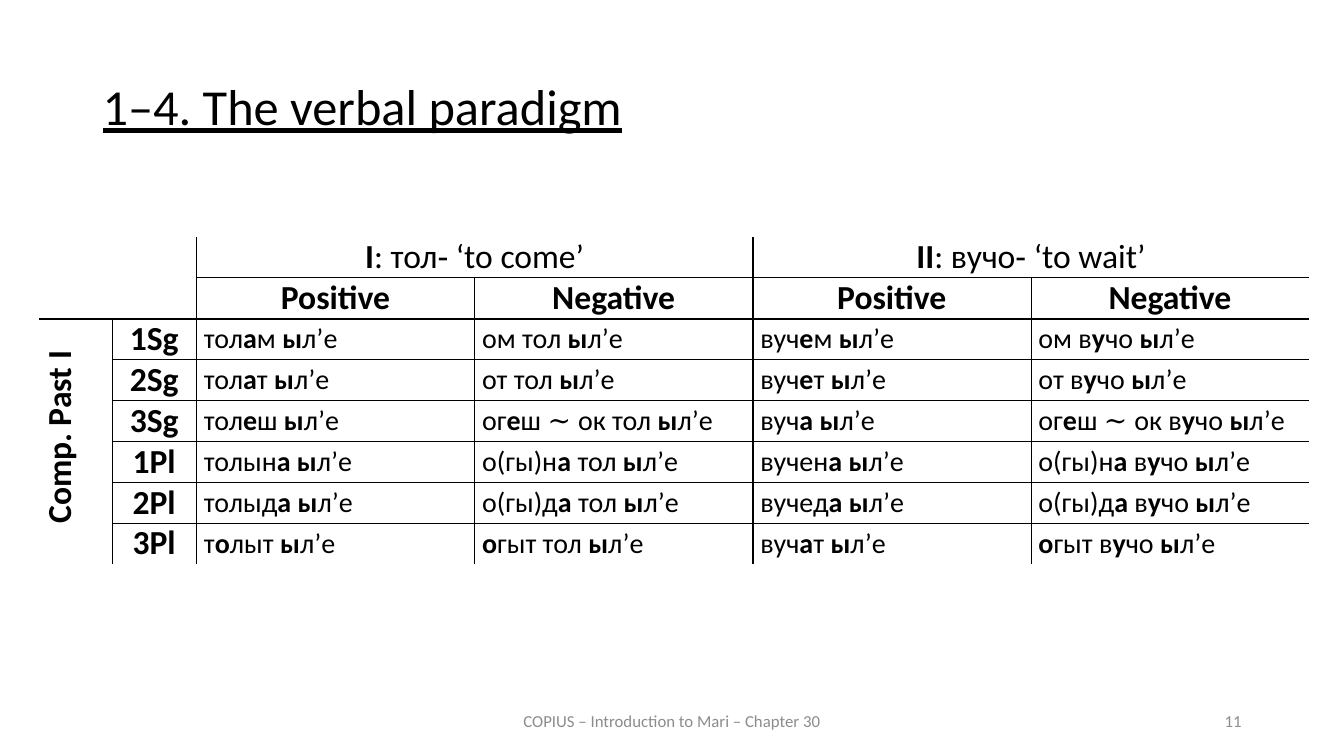
from dataclasses import dataclass

from lxml.etree import SubElement
from pptx import Presentation
from pptx.dml.color import RGBColor as RGB
from pptx.enum.text import MSO_ANCHOR as Anchor, MSO_AUTO_SIZE as AutoSize, PP_ALIGN as Align
from pptx.oxml.ns import qn
from pptx.util import Cm, Pt

TITLE = "1–4. The verbal paradigm"
FOOTER = "COPIUS – Introduction to Mari – Chapter 30"
NUMBER = "11"

# Asterisks switch bold on and off.
VERBS = ["*I*: тол‑ ‘to come’", "*II*: вучо‑ ‘to wait’"]
POLARITY = ["*Positive*", "*Negative*"]
TENSE = "*Comp. Past I*"
FORMS = [
    ("1Sg", "тол*а*м *ы*л’е", "ом тол *ы*л’е", "вуч*е*м *ы*л’е", "ом в*у*чо *ы*л’е"),
    ("2Sg", "тол*а*т *ы*л’е", "от тол *ы*л’е", "вуч*е*т *ы*л’е", "от в*у*чо *ы*л’е"),
    ("3Sg", "тол*е*ш *ы*л’е", "ог*е*ш ∼ ок тол *ы*л’е", "вуч*а ы*л’е", "ог*е*ш ∼ ок в*у*чо *ы*л’е"),
    ("1Pl", "толын*а ы*л’е", "о(гы)н*а *тол *ы*л’е", "вучен*а ы*л’е", "о(гы)н*а *в*у*чо *ы*л’е"),
    ("2Pl", "толыд*а ы*л’е", "о(гы)д*а* тол *ы*л’е", "вучед*а ы*л’е", "о(гы)д*а* в*у*чо *ы*л’е"),
    ("3Pl", "т*о*лыт *ы*л’е", "*о*гыт тол *ы*л’е", "вуч*а*т *ы*л’е", "*о*гыт в*у*чо *ы*л’е"),
]
COL_WIDTHS = [1.83, 2.13] + [7.01] * 4
ROW_HEIGHT = 1.03
HEAD_ROWS, LABEL_COLS = 2, 2


@dataclass(frozen=True)
class Theme:
    ink: str = "000000"
    muted: str = "8C8C8C"
    font: str = "Calibri"
    symbol_font: str = "Times New Roman"
    title: int = 36
    head: int = 24
    form: int = 20
    footer: int = 12
    thin: float = 0.5
    thick: float = 1.5


T = Theme()
ROWS, COLS = HEAD_ROWS + len(FORMS), len(COL_WIDTHS)


def add_run(p, text, size, color=T.ink, bold=False, font=T.font):
    r = p.add_run()
    r.text = text
    r.font.name, r.font.size, r.font.bold = font, Pt(size), bold
    r.font.color.rgb = RGB.from_string(color)
    return r


def add_marked(p, text, size):
    for i, part in enumerate(text.split("*")):
        before, symbol, after = part.partition("∼ ")
        for piece, font in ((before, T.font), (symbol, T.symbol_font), (after, T.font)):
            if piece:
                add_run(p, piece, size, bold=i % 2 == 1, font=font)


def line_below(r, c):
    if r == HEAD_ROWS - 1:
        return T.thick
    first = LABEL_COLS if r < HEAD_ROWS else 1
    return T.thin if 0 <= r < ROWS - 1 and c >= first else 0


def line_right(r, c):
    if c in (1, 3):
        return T.thick
    first = HEAD_ROWS if c == 0 else 1
    return T.thin if 0 <= c < COLS - 1 and r >= first else 0


def set_borders(cell, r, c):
    edges = {"L": line_right(r, c - 1), "R": line_right(r, c),
             "T": line_below(r - 1, c), "B": line_below(r, c)}
    tcPr = cell._tc.get_or_add_tcPr()
    for side, width in edges.items():
        ln = SubElement(tcPr, qn("a:ln" + side), w=str(int(Pt(width))))
        if width:
            fill = SubElement(ln, qn("a:solidFill"))
            SubElement(fill, qn("a:srgbClr"), val=T.ink)
        else:
            SubElement(ln, qn("a:noFill"))


def fill_cell(cell, text, size, align, anchor=Anchor.TOP):
    p = cell.text_frame.paragraphs[0]
    p.alignment = align
    cell.vertical_anchor = anchor
    add_marked(p, text, size)


def add_paradigm(s):
    gf = s.shapes.add_table(ROWS, COLS, Cm(0.99), Cm(5.97),
                            Cm(sum(COL_WIDTHS)), Cm(ROW_HEIGHT * ROWS))
    table = gf.table
    table.first_row = table.horz_banding = False
    for col, width in zip(table.columns, COL_WIDTHS):
        col.width = Cm(width)
    for r, row in enumerate(table.rows):
        row.height = Cm(ROW_HEIGHT)
        for c, cell in enumerate(row.cells):
            cell.margin_left = cell.margin_right = Cm(0.19)
            cell.margin_top = cell.margin_bottom = 0
            set_borders(cell, r, c)
            cell.fill.background()

    for i, verb in enumerate(VERBS):
        c = LABEL_COLS + i * len(POLARITY)
        table.cell(0, c).merge(table.cell(0, c + len(POLARITY) - 1))
        fill_cell(table.cell(0, c), verb, T.head, Align.CENTER)
        for j, polarity in enumerate(POLARITY):
            fill_cell(table.cell(1, c + j), polarity, T.head, Align.CENTER)

    tense = table.cell(HEAD_ROWS, 0)
    tense.merge(table.cell(ROWS - 1, 0))
    fill_cell(tense, TENSE, T.head, Align.CENTER)
    tense._tc.tcPr.set("vert", "vert270")
    tense.text_frame.paragraphs[0]._p.get_or_add_pPr().set("marL", str(int(Cm(0.2))))

    for r, (person, *forms) in enumerate(FORMS, HEAD_ROWS):
        fill_cell(table.cell(r, 1), f"*{person}*", T.head, Align.CENTER)
        for c, form in enumerate(forms, LABEL_COLS):
            fill_cell(table.cell(r, c), form, T.form, Align.JUSTIFY, Anchor.MIDDLE)


def add_title(s):
    sp = s.shapes.title
    sp.left, sp.top, sp.width, sp.height = Cm(2.33), Cm(1.93), Cm(29.21), Cm(2.11)
    tf = sp.text_frame
    tf.auto_size, tf.vertical_anchor = AutoSize.NONE, Anchor.TOP
    p = tf.paragraphs[0]
    p.alignment, p.line_spacing = Align.JUSTIFY, 0.9
    add_run(p, TITLE, T.title).font.underline = True


def add_footer(s, text, left, width, align):
    tf = s.shapes.add_textbox(Cm(left), Cm(17.65), Cm(width), Cm(1.02)).text_frame
    tf.word_wrap, tf.vertical_anchor = True, Anchor.MIDDLE
    p = tf.paragraphs[0]
    p.alignment = align
    add_run(p, text, T.footer, T.muted)


def main():
    prs = Presentation()
    prs.slide_width, prs.slide_height = Cm(33.87), Cm(19.05)
    s = prs.slides.add_slide(prs.slide_layouts[5])
    add_title(s)
    add_footer(s, FOOTER, 11.22, 11.43, Align.CENTER)
    add_footer(s, NUMBER, 23.92, 7.62, Align.RIGHT)
    add_paradigm(s)
    prs.save("out.pptx")


if __name__ == "__main__":
    main()
